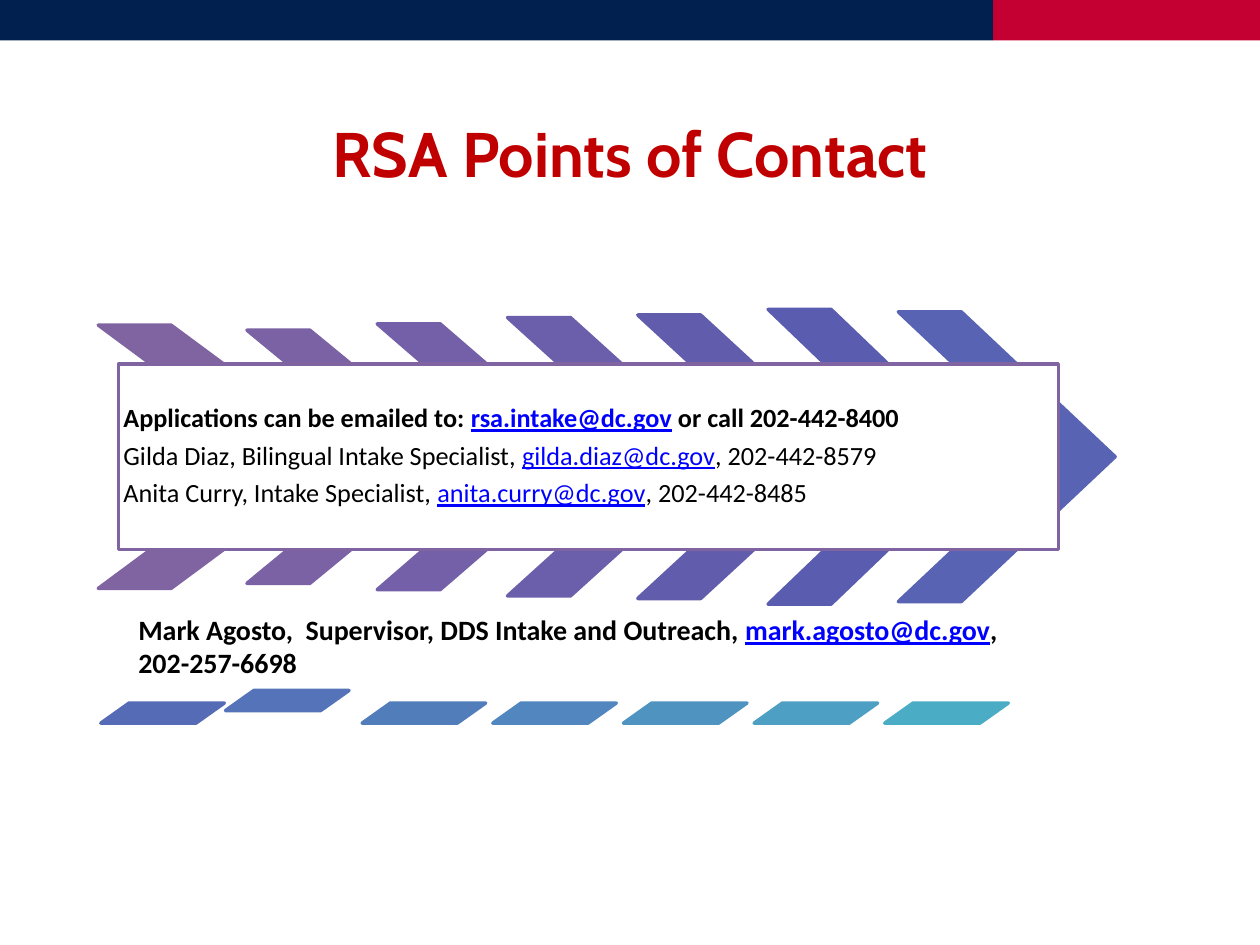
from pptx import Presentation
from pptx.dml.color import RGBColor
from pptx.enum.shapes import MSO_SHAPE
from pptx.enum.text import MSO_ANCHOR, MSO_AUTO_SIZE, PP_ALIGN
from pptx.util import Inches, Pt

NAVY = RGBColor(0x01, 0x1F, 0x4F)
CRIMSON = RGBColor(0xC4, 0x00, 0x33)
TITLE_RED = RGBColor(0xC0, 0x00, 0x00)
PURPLE = RGBColor(0x80, 0x64, 0xA2)
WHITE = RGBColor(0xFF, 0xFF, 0xFF)
BLACK = RGBColor(0x00, 0x00, 0x00)
LINK_BLUE = RGBColor(0x00, 0x00, 0xFF)
CHEVRON_COLORS = [RGBColor.from_string(c) for c in (
    "8064A2", "7A62A5", "7360A8", "6B5EAB", "625CAD", "5A5CB0", "5863B3")]
SLANT_COLORS = [RGBColor.from_string(c) for c in (
    "566BB6", "5473B9", "527DBB", "5187BE", "4F93C1", "4D9FC3", "4BACC6")]

prs = Presentation()
prs.slide_width, prs.slide_height = Inches(10), Inches(7.5)
slide = prs.slides.add_slide(prs.slide_layouts[5])


def add_block(preset, left, top, width, height, fill, line=None, adjustment=None):
    block = slide.shapes.add_shape(
        preset, Inches(left), Inches(top), Inches(width), Inches(height))
    block.shadow.inherit = False
    block.fill.solid()
    block.fill.fore_color.rgb = fill
    if line is None:
        block.line.fill.background()
    else:
        block.line.color.rgb = line
        block.line.width = Pt(2)
    if adjustment is not None:
        block.adjustments[0] = adjustment
    return block


def write_contact(paragraph, before, address, after, size, bold):
    paragraph.alignment = PP_ALIGN.LEFT
    paragraph.font.name = "Calibri"
    paragraph.font.size = Pt(size)
    paragraph.font.bold = bold
    for words in (before, address, after):
        run = paragraph.add_run()
        run.text = words
        run.font.color.rgb = LINK_BLUE if words == address else BLACK
        if words == address:
            run.font.underline = True


add_block(MSO_SHAPE.RECTANGLE, 7.88, 0, 2.12, 0.32, CRIMSON)
add_block(MSO_SHAPE.RECTANGLE, 0, 0, 7.88, 0.32, NAVY)

title = slide.shapes.title
title.left, title.top = Inches(1), Inches(0.83)
title.width, title.height = Inches(8), Inches(1.25)
heading = title.text_frame
heading.text = "RSA Points of Contact"
heading.auto_size = MSO_AUTO_SIZE.NONE
heading.vertical_anchor = MSO_ANCHOR.TOP
heading.margin_left = heading.margin_right = Inches(0)
heading.margin_top = heading.margin_bottom = Inches(0)
heading_line = heading.paragraphs[0]
heading_line.alignment = PP_ALIGN.CENTER
heading_line.line_spacing = Pt(49)
heading_line.font.name = "Cabin"
heading_line.font.size = Pt(36)
heading_line.font.bold = True
heading_line.font.color.rgb = TITLE_RED

CHEVRON_MIDDLE = 3.625
chevron_heights = [2.09, 2.01, 2.11, 2.21, 2.25, 2.34, 2.3]
for i, (height, color) in enumerate(zip(chevron_heights, CHEVRON_COLORS)):
    left, width = (0.78, 1.99) if i == 0 else (1.96 + 1.034 * (i - 1), 1.72)
    add_block(MSO_SHAPE.CHEVRON, left, CHEVRON_MIDDLE - height / 2, width, height,
              color, color, 0.71)

intake = add_block(MSO_SHAPE.RECTANGLE, 0.94, 2.89, 7.46, 1.47, WHITE, PURPLE).text_frame
intake.word_wrap = True
intake.vertical_anchor = MSO_ANCHOR.MIDDLE
intake.margin_left = intake.margin_right = Inches(0.04)
intake.margin_top = intake.margin_bottom = Inches(0.04)
intake_contacts = [
    ("Applications can be emailed to: ", "rsa.intake@dc.gov", " or call 202-442-8400"),
    ("Gilda Diaz, Bilingual Intake Specialist, ", "gilda.diaz@dc.gov", ", 202-442-8579"),
    ("Anita Curry, Intake Specialist, ", "anita.curry@dc.gov", ", 202-442-8485"),
]
for i, contact in enumerate(intake_contacts):
    entry = intake.paragraphs[0] if i == 0 else intake.add_paragraph()
    entry.line_spacing = 0.9
    entry.space_after = Pt(5.25)
    write_contact(entry, *contact, size=15, bold=i == 0)

for i, color in enumerate(SLANT_COLORS):
    left = 0.8 + 1.037 * i
    top = 5.58
    if i == 1:
        left, top = 1.79, 5.48
    add_block(MSO_SHAPE.PARALLELOGRAM, left, top, 0.98, 0.16, color, color, 1.41)

supervisor = slide.shapes.add_textbox(
    Inches(1), Inches(4.81), Inches(8.56), Inches(1.25)).text_frame
supervisor.word_wrap = True
write_contact(supervisor.paragraphs[0],
              "Mark Agosto,  Supervisor, DDS Intake and Outreach, ",
              "mark.agosto@dc.gov", ",", size=16, bold=True)
phone = supervisor.add_paragraph()
phone.text = "202-257-6698"
phone.font.name = "Calibri"
phone.font.size = Pt(16)
phone.font.bold = True
phone.font.color.rgb = BLACK

prs.save("out.pptx")
